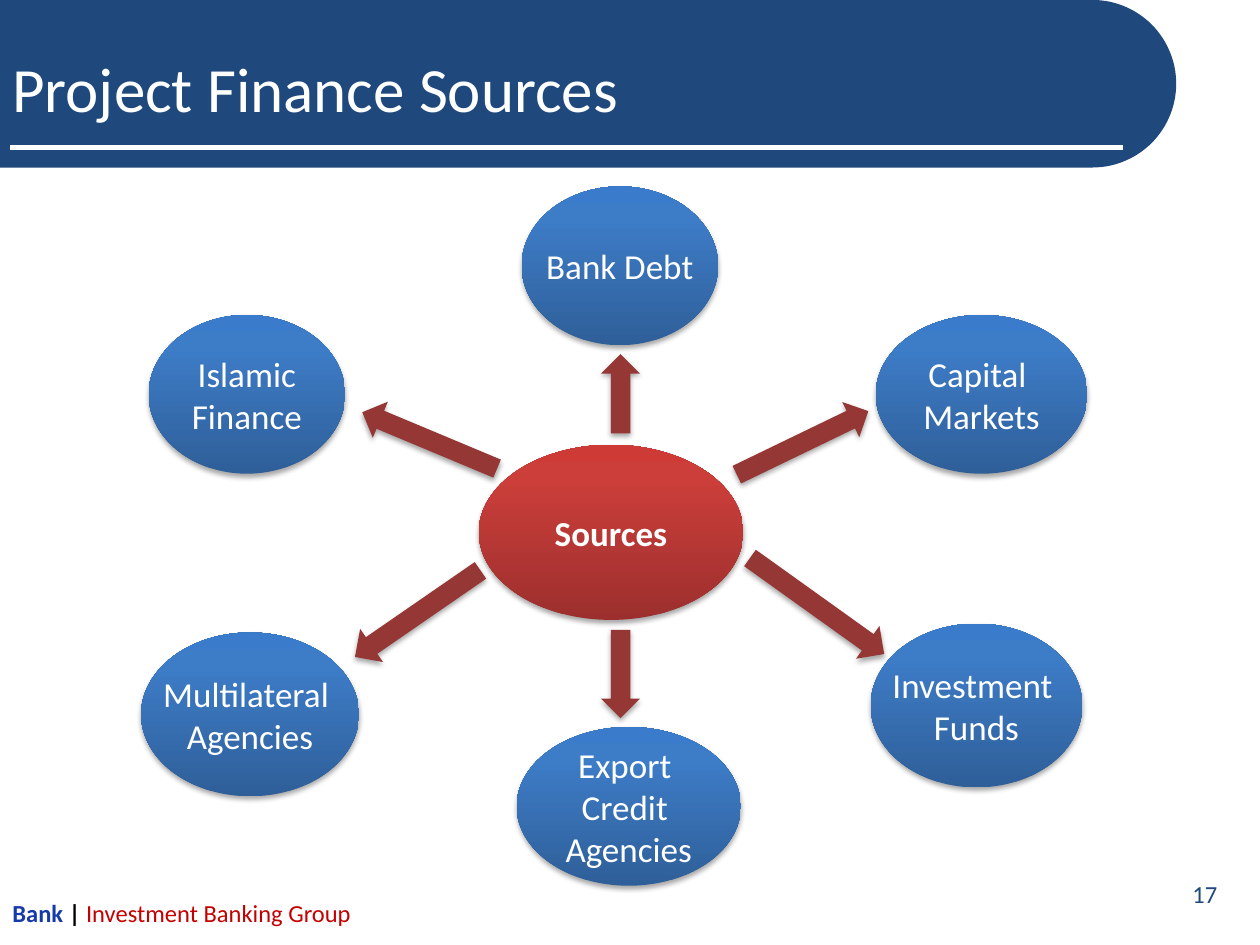
import math

from copy import deepcopy
from lxml import etree
from pptx import Presentation
from pptx.dml.color import RGBColor
from pptx.enum import shapes, text
from pptx.oxml.ns import qn
from pptx.util import Inches, Pt

FONT = "Calibri"
NAVY, WHITE, ARROW_RED = "1F497D", "FFFFFF", "953735"
RED_GRADIENT = [(0, "9C2F2D"), (0.8, "CB3E3A"), (1, "CE3B37")]
BLUE_GRADIENT = [(0, "2F5F99"), (0.8, "3D7CC7"), (1, "3A7CCB")]

# Text lines, then left, top, width, height
SOURCES = [
    (["Islamic", "Finance"], 1.18, 2.5, 1.56, 1.26),
    (["Investment ", "Funds"], 6.91, 4.95, 1.68, 1.3),
    (["Multilateral ", "Agencies"], 1.12, 5.02, 1.73, 1.3),
    (["Export ", "Credit ", "Agencies"], 4.1, 5.77, 1.78, 1.26),
    (["Capital ", "Markets"], 6.95, 2.5, 1.68, 1.26),
    (["Bank Debt"], 4.14, 1.48, 1.56, 1.26),
]

# Preset, rotation, then left, top, width, height
DOWN, RIGHT = shapes.MSO_SHAPE.DOWN_ARROW, shapes.MSO_SHAPE.RIGHT_ARROW
ARROWS = [
    (DOWN, 0, 4.77, 5, 0.31, 0.7),
    (RIGHT, 35.6, 5.83, 4.65, 1.31, 0.32),
    (RIGHT, 334.2, 5.79, 3.36, 1.16, 0.31),
    (DOWN, 180, 4.77, 2.81, 0.31, 0.63),
    (RIGHT, 202.7, 2.83, 3.34, 1.16, 0.31),
    (RIGHT, 145.4, 2.71, 4.71, 1.21, 0.32),
]


def color(hex_string):
    return RGBColor.from_string(hex_string)


def fill_solid(shape, hex_string):
    shape.fill.solid()
    shape.fill.fore_color.rgb = color(hex_string)
    shape.line.fill.background()
    shape.shadow.inherit = False


def fill_gradient(shape, stops):
    """Fill from bottom to top with three colour stops."""
    shape.fill.gradient()
    shape.fill.gradient_angle = 90
    stop_list = shape._element.spPr.find(".//" + qn("a:gsLst"))
    stop_list.append(deepcopy(stop_list[-1]))
    for stop, (position, hex_string) in zip(shape.fill.gradient_stops, stops):
        stop.position = position
        stop.color.rgb = color(hex_string)
    shape.line.fill.background()


def add_shadow(shape):
    shape.shadow.inherit = False
    effects = shape._element.spPr.find(qn("a:effectLst"))
    shadow = etree.SubElement(
        effects, qn("a:outerShdw"), blurRad=str(Pt(3.1)), dist=str(Pt(1.8)),
        dir="5400000", rotWithShape="0")
    black = etree.SubElement(shadow, qn("a:srgbClr"), val="000000")
    etree.SubElement(black, qn("a:alpha"), val="35000")


def format_run(run, size, hex_string, bold=False):
    run.font.name = FONT
    run.font.size = Pt(size)
    run.font.color.rgb = color(hex_string)
    run.font.bold = bold


def add_text(slide, box, runs, size, anchor=text.MSO_ANCHOR.MIDDLE,
             align=text.PP_ALIGN.LEFT):
    """Add one line of text; runs are (wording, colour, bold)."""
    frame = slide.shapes.add_textbox(*map(Inches, box)).text_frame
    frame.word_wrap = True
    frame.vertical_anchor = anchor
    paragraph = frame.paragraphs[0]
    paragraph.alignment = align
    for wording, hex_string, bold in runs:
        run = paragraph.add_run()
        run.text = wording
        format_run(run, size, hex_string, bold)


def add_banner(slide):
    """Add the title band with a half-round right end and its rule."""
    radius, center_x, steps = 0.665, 8.67, 60
    angles = [math.pi * (step / steps - 0.5) for step in range(steps + 1)]
    arc = [(Inches(center_x + radius * math.cos(angle)),
            Inches(radius + radius * math.sin(angle))) for angle in angles]
    builder = slide.shapes.build_freeform(0, 0)
    builder.add_line_segments(arc + [(0, Inches(2 * radius))], close=True)
    fill_solid(builder.convert_to_shape(), NAVY)

    rule = slide.shapes.add_connector(
        shapes.MSO_CONNECTOR.STRAIGHT,
        Inches(0.08), Inches(1.17), Inches(8.91), Inches(1.17))
    rule.line.color.rgb = color(WHITE)
    rule.line.width = Pt(3)
    etree.SubElement(rule._element.spPr, qn("a:effectLst"))


def add_bubble(slide, preset, lines, box, stops, bold=False):
    shape = slide.shapes.add_shape(preset, *map(Inches, box))
    fill_gradient(shape, stops)
    add_shadow(shape)
    frame = shape.text_frame
    frame.margin_left = frame.margin_right = 0
    frame.margin_top = frame.margin_bottom = 0
    frame.word_wrap = False
    frame.vertical_anchor = text.MSO_ANCHOR.MIDDLE
    frame.text = "\n".join(lines)
    for paragraph in frame.paragraphs:
        paragraph.alignment = text.PP_ALIGN.CENTER
        format_run(paragraph.runs[0], 20, WHITE, bold)


def add_arrow(slide, preset, rotation, box):
    shape = slide.shapes.add_shape(preset, *map(Inches, box))
    shape.rotation = rotation
    fill_solid(shape, ARROW_RED)
    add_shadow(shape)


def main():
    presentation = Presentation()
    presentation.slide_width = Inches(10)
    presentation.slide_height = Inches(7.5)
    slide = presentation.slides.add_slide(presentation.slide_layouts[6])

    # Title band and page number
    add_banner(slide)
    add_text(slide, (0, 0.23, 9.3, 0.92),
             [("Project Finance Sources", WHITE, False)], 36)
    add_text(slide, (8.91, 6.84, 0.85, 0.5), [("17", NAVY, False)], 14,
             align=text.PP_ALIGN.RIGHT)

    # Hub, sources around it, and arrows between them
    add_bubble(slide, shapes.MSO_SHAPE.OVAL, ["Sources"],
               (3.8, 3.53, 2.1, 1.39), RED_GRADIENT, bold=True)
    for lines, *box in SOURCES:
        add_bubble(slide, shapes.MSO_SHAPE.FLOWCHART_CONNECTOR, lines, box,
                   BLUE_GRADIENT)
    for preset, rotation, *box in ARROWS:
        add_arrow(slide, preset, rotation, box)

    # Footer
    add_text(slide, (0, 7.08, 3.59, 0.42),
             [("Bank ", "173AA9", True), ("| ", "000000", True),
              ("Investment Banking Group", "C40000", False)],
             14, anchor=text.MSO_ANCHOR.TOP)

    presentation.save("out.pptx")


if __name__ == "__main__":
    main()
